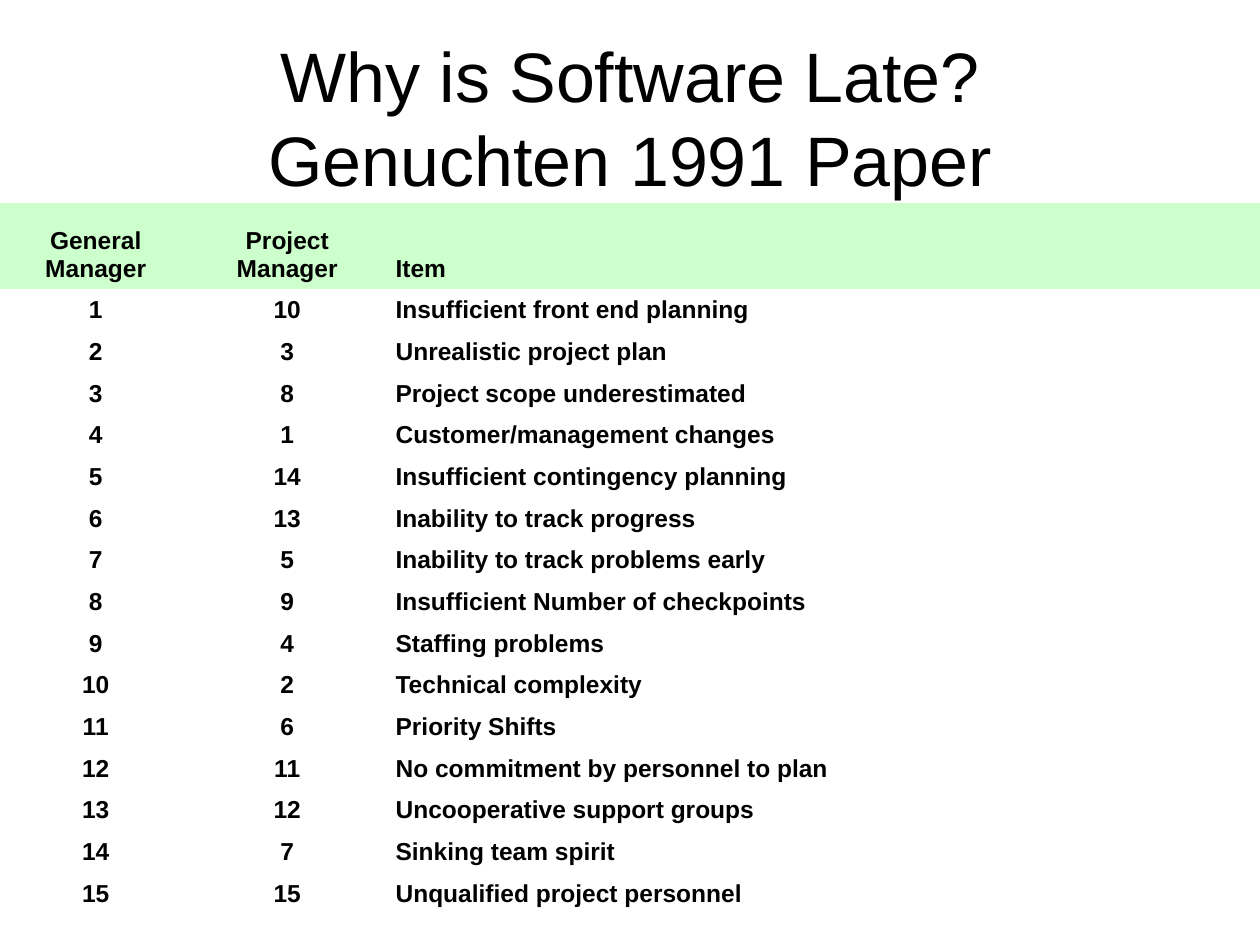
from dataclasses import dataclass

from pptx import Presentation
from pptx.dml.color import RGBColor
from pptx.enum.text import MSO_ANCHOR, PP_ALIGN
from pptx.oxml.ns import qn
from pptx.util import Cm, Pt

CENTER, LEFT = PP_ALIGN.CENTER, PP_ALIGN.LEFT
MIDDLE, BOTTOM = MSO_ANCHOR.MIDDLE, MSO_ANCHOR.BOTTOM
TITLE_ONLY = 5
PLAIN_TABLE_STYLE = "{2D5ABB26-0587-4C30-8999-92F81FD0307C}"


@dataclass(frozen=True)
class Theme:
    font: str = "Arial"
    title_size: int = 40
    table_size: int = 14
    text: RGBColor = RGBColor(0x00, 0x00, 0x00)
    header_fill: RGBColor = RGBColor(0xCC, 0xFF, 0xCC)
    body_fill: RGBColor = RGBColor(0xFF, 0xFF, 0xFF)


THEME = Theme()

TITLE = "Why is Software Late?\vGenuchten 1991 Paper"
HEADER = ("General Manager", "Project Manager", "Item")
# Project manager's rank and item, in the order of the general manager's rank
RANKED_ITEMS = [
    (10, "Insufficient front end planning"),
    (3, "Unrealistic project plan"),
    (8, "Project scope underestimated"),
    (1, "Customer/management changes"),
    (14, "Insufficient contingency planning"),
    (13, "Inability to track progress"),
    (5, "Inability to track problems early"),
    (9, "Insufficient Number of checkpoints"),
    (4, "Staffing problems"),
    (2, "Technical complexity"),
    (6, "Priority Shifts"),
    (11, "No commitment by personnel to plan"),
    (12, "Uncooperative support groups"),
    (7, "Sinking team spirit"),
    (15, "Unqualified project personnel"),
]

COLUMN_WIDTHS = (Cm(3.86), Cm(3.86), Cm(17.68))
HEADER_HEIGHT, ROW_HEIGHT = Cm(1.73), Cm(0.84)
RANK_INDENT, ITEM_INDENT = Cm(0.97), Cm(2.54)


def format_runs(paragraph, size, bold=False):
    for run in paragraph.runs:
        run.font.name = THEME.font
        run.font.size = Pt(size)
        run.font.bold = bold
        run.font.color.rgb = THEME.text


def set_hanging_indent(paragraph, indent):
    properties = paragraph._p.get_or_add_pPr()
    properties.set("marL", str(indent))
    properties.set("indent", str(-indent))


def add_title(slide):
    title = slide.shapes.title
    title.left, title.top = Cm(1.27), Cm(0.76)
    title.width, title.height = Cm(22.86), Cm(3.18)
    title.text_frame.text = TITLE
    title.text_frame.vertical_anchor = MIDDLE
    paragraph = title.text_frame.paragraphs[0]
    paragraph.alignment = CENTER
    format_runs(paragraph, THEME.title_size)


def fill_cell(cell, text, fill, alignment, indent):
    cell.fill.solid()
    cell.fill.fore_color.rgb = fill
    cell.vertical_anchor = BOTTOM
    cell.text_frame.text = text
    paragraph = cell.text_frame.paragraphs[0]
    paragraph.alignment = alignment
    set_hanging_indent(paragraph, indent)
    format_runs(paragraph, THEME.table_size, bold=True)


def add_ranking_table(slide):
    rows = [HEADER]
    for rank, (project_rank, item) in enumerate(RANKED_ITEMS, start=1):
        rows.append((str(rank), str(project_rank), item))

    height = HEADER_HEIGHT + ROW_HEIGHT * len(RANKED_ITEMS)
    table = slide.shapes.add_table(
        len(rows), len(HEADER), Cm(0), Cm(4.09), sum(COLUMN_WIDTHS), height
    ).table
    table.first_row = table.horz_banding = False
    table._tbl.tblPr.find(qn("a:tableStyleId")).text = PLAIN_TABLE_STYLE

    for column, width in zip(table.columns, COLUMN_WIDTHS):
        column.width = width
    for row_index, texts in enumerate(rows):
        is_header = row_index == 0
        table.rows[row_index].height = HEADER_HEIGHT if is_header else ROW_HEIGHT
        fill = THEME.header_fill if is_header else THEME.body_fill
        rank_indent = 0 if is_header else RANK_INDENT
        for column_index, text in enumerate(texts):
            is_item = column_index == len(HEADER) - 1
            fill_cell(
                table.cell(row_index, column_index),
                text,
                fill,
                LEFT if is_item else CENTER,
                ITEM_INDENT if is_item else rank_indent,
            )


def main():
    presentation = Presentation()
    presentation.slide_width, presentation.slide_height = Cm(25.4), Cm(19.05)
    slide = presentation.slides.add_slide(presentation.slide_layouts[TITLE_ONLY])
    add_title(slide)
    add_ranking_table(slide)
    presentation.save("out.pptx")


if __name__ == "__main__":
    main()
